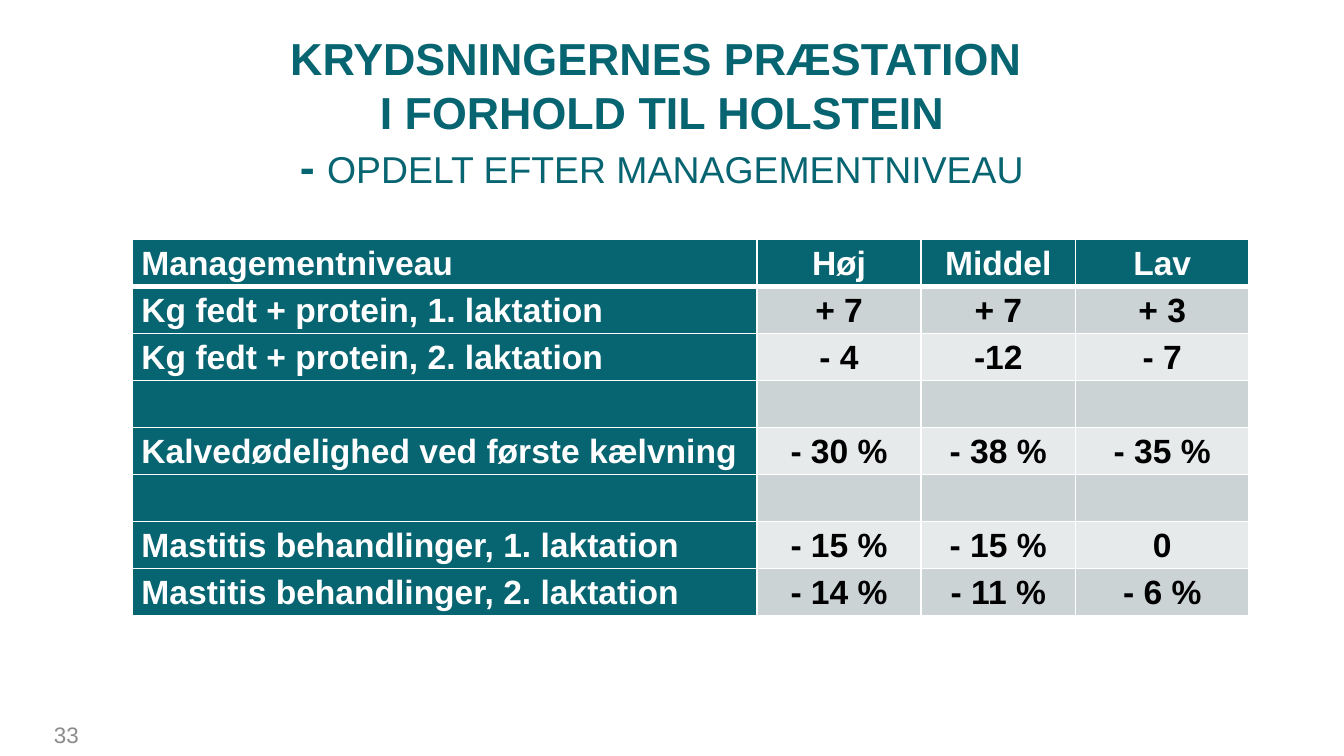
import pptx
import pptx.util
import pptx.dml.color
import pptx.enum.text
import pptx.oxml
import pptx.oxml.ns

Pt = pptx.util.Pt
ALIGN = pptx.enum.text.PP_ALIGN
TEAL, WHITE, BLACK, GREY = "076471", "FFFFFF", "000000", "8C8C8C"
BANDS = ["CCD3D5", "E7EAEB"]


def style(font, size, color, bold=False):
    font.name = "Arial"
    font.size = Pt(size)
    font.bold = bold
    font.color.rgb = pptx.dml.color.RGBColor.from_string(color)


def add_border(cell, side, width):
    ns = pptx.oxml.ns.nsdecls("a")
    cell._tc.get_or_add_tcPr().append(pptx.oxml.parse_xml(
        f'<a:ln{side} {ns} w="{Pt(width)}"><a:solidFill>'
        f'<a:srgbClr val="{WHITE}"/></a:solidFill></a:ln{side}>'))


prs = pptx.Presentation()
prs.slide_width, prs.slide_height = Pt(720), Pt(405)
s = prs.slides.add_slide(prs.slide_layouts[6])

# Title
tf = s.shapes.add_textbox(Pt(36.7), Pt(26), Pt(635.8), Pt(67.7)).text_frame
tf.word_wrap = True
tf.vertical_anchor = pptx.enum.text.MSO_ANCHOR.MIDDLE
p = tf.paragraphs[0]
p.alignment = ALIGN.CENTER
for i, text in enumerate(["KRYDSNINGERNES PRÆSTATION ", "I FORHOLD TIL HOLSTEIN", "- "]):
    if i:
        p.add_line_break()
    r = p.add_run()
    r.text = text
    style(r.font, 24, TEAL, True)
r = p.add_run()
r.text = "OPDELT EFTER MANAGEMENTNIVEAU"
style(r.font, 20, TEAL)

# Result table
rows = [
    ["Managementniveau", "Høj", "Middel", "Lav"],
    ["Kg fedt + protein, 1. laktation", "+ 7", "+ 7", "+ 3"],
    ["Kg fedt + protein, 2. laktation", "- 4", "-12", "- 7"],
    ["", "", "", ""],
    ["Kalvedødelighed ved første kælvning", "- 30 %", "- 38 %", "- 35 %"],
    ["", "", "", ""],
    ["Mastitis behandlinger, 1. laktation", "- 15 %", "- 15 %", "0"],
    ["Mastitis behandlinger, 2. laktation", "- 14 %", "- 11 %", "- 6 %"],
]
widths = [334.8, 87.8, 82.8, 92.9]
row_height = 25.2
table = s.shapes.add_table(len(rows), len(widths), Pt(70.8), Pt(128.2),
                           Pt(sum(widths)), Pt(row_height * len(rows))).table
for column, width in zip(table.columns, widths):
    column.width = Pt(width)
for i, row in enumerate(rows):
    table.rows[i].height = Pt(row_height)
    for j, text in enumerate(row):
        cell = table.cell(i, j)
        cell.margin_left = cell.margin_right = Pt(5)
        cell.margin_top = cell.margin_bottom = 0
        # A thicker rule separates the header from the body
        for side in "LRTB":
            add_border(cell, side, 3 if (i, side) in [(0, "B"), (1, "T")] else 1)
        heading = i == 0 or j == 0
        cell.fill.solid()
        cell.fill.fore_color.rgb = pptx.dml.color.RGBColor.from_string(
            TEAL if heading else BANDS[(i - 1) % 2])
        cell.text = text
        p = cell.text_frame.paragraphs[0]
        p.alignment = ALIGN.CENTER if j else ALIGN.LEFT
        p.line_spacing = 1.15
        style(p.font, 18, WHITE if heading else BLACK, True)

# Page number
tf = s.shapes.add_textbox(0, Pt(383), Pt(56.2), Pt(21.6)).text_frame
tf.word_wrap = True
tf.margin_right = Pt(14)
p = tf.paragraphs[0]
p.text = "33"
p.alignment = ALIGN.RIGHT
style(p.font, 12, GREY)

prs.save("out.pptx")
